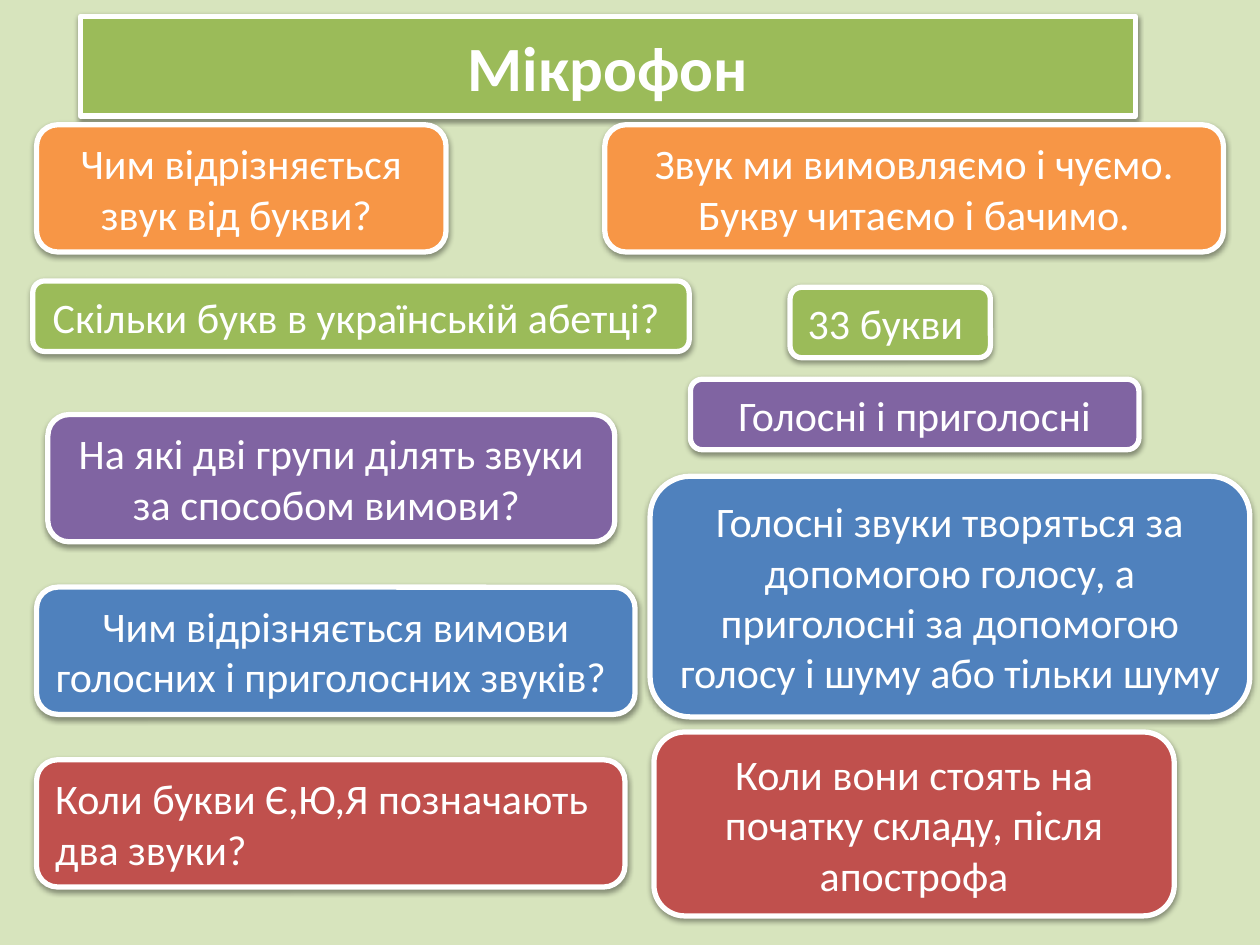
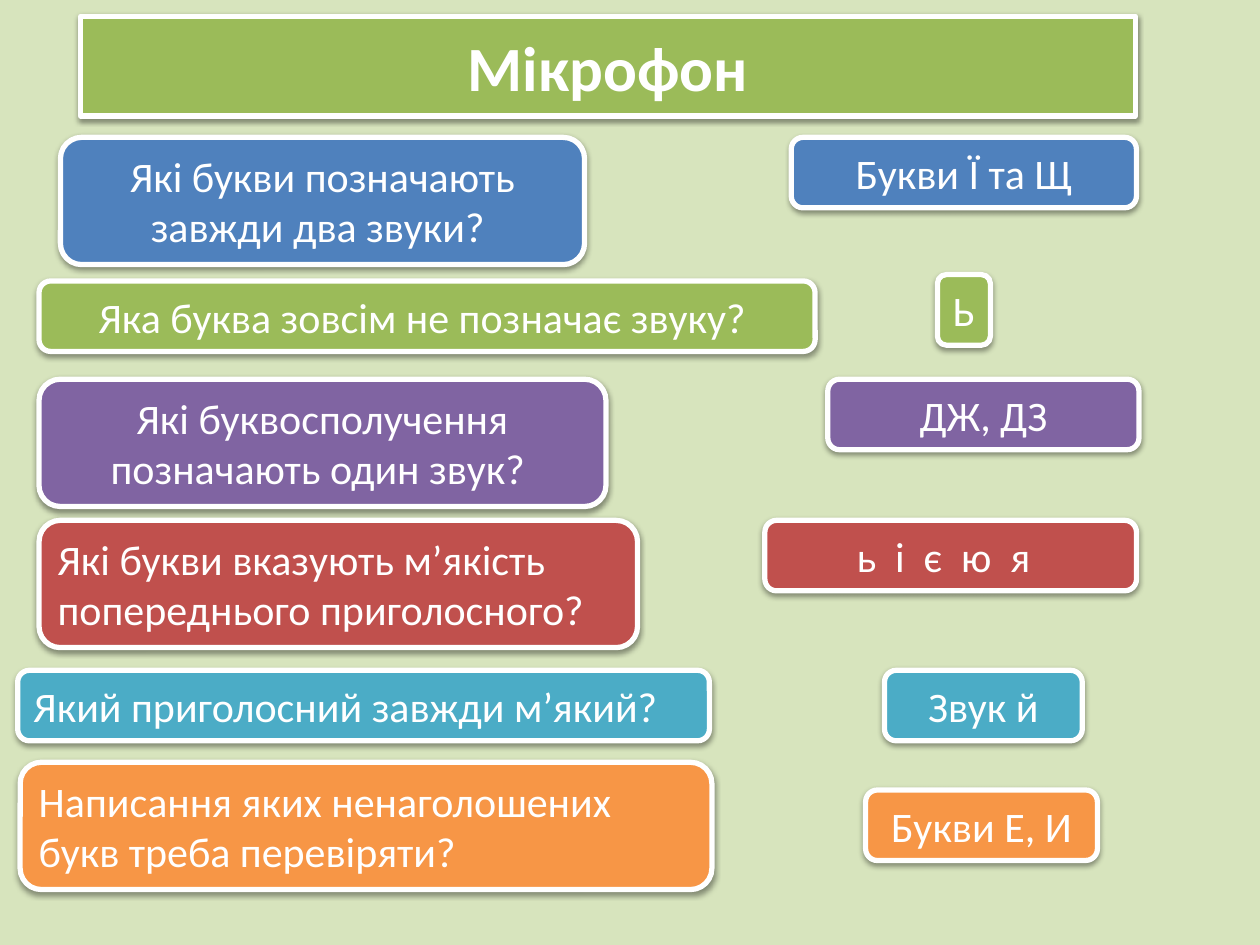
from lxml import etree
from pptx import Presentation
from pptx.dml.color import RGBColor
from pptx.enum.shapes import MSO_SHAPE
from pptx.enum.text import MSO_ANCHOR, MSO_AUTO_SIZE, PP_ALIGN
from pptx.oxml import parse_xml
from pptx.oxml.ns import nsdecls
from pptx.util import Inches, Pt

ROUNDED = MSO_SHAPE.ROUNDED_RECTANGLE
MIDDLE = MSO_ANCHOR.MIDDLE
FIT_SHAPE = MSO_AUTO_SIZE.SHAPE_TO_FIT_TEXT
NO_FIT = MSO_AUTO_SIZE.NONE
LEFT, CENTER = PP_ALIGN.LEFT, PP_ALIGN.CENTER

# Shared look
FONT = "Calibri"
PALE, WHITE = "D7E4BD", "FFFFFF"
GREEN, ORANGE, PURPLE = "9BBB59", "F79646", "8064A2"
BLUE, RED, TEAL = "4F81BD", "C0504D", "4BACC6"
TITLE_BOX = (0.64, 0.13, 8.37, 0.79)
LINE_HEIGHT, PADDING = 0.45, 0.11
SHADOW = (
    f'<a:outerShdw {nsdecls("a")} blurRad="40000" dist="20000" '
    'dir="5400000" rotWithShape="0"><a:srgbClr val="000000">'
    '<a:alpha val="38000"/></a:srgbClr></a:outerShdw>'
)

# Each row: colour, question, answer
# Each card: text, left, top, width, number of lines, then options
SOUNDS = [
    (ORANGE,
     ("Чим відрізняється звук від букви? ", 0.29, 0.99, 3.25, 2),
     ("Звук ми вимовляємо і чуємо. Букву читаємо і бачимо.",
      4.8, 0.99, 4.91, 2)),
    (GREEN,
     ("Скільки букв в українській абетці? ", 0.26, 2.23, 5.21, 1),
     ("33 букви ", 6.27, 2.28, 1.59, 1, {"wrap": False})),
    (PURPLE,
     ("На які дві групи ділять звуки за способом вимови? ",
      0.38, 3.29, 4.5, 2),
     ("Голосні і приголосні", 5.48, 3.01, 3.56, 1)),
    (BLUE,
     ("Чим відрізняється вимови голосних і приголосних звуків? ",
      0.29, 4.66, 4.75, 2),
     ("Голосні звуки творяться за допомогою голосу, а приголосні "
      "за допомогою голосу і шуму або тільки шуму",
      5.16, 3.78, 4.76, 4)),
    (RED,
     ("Коли букви Є,Ю,Я позначають два звуки?",
      0.29, 6.03, 4.67, 2, {"align": LEFT}),
     ("Коли вони стоять на початку складу, після апострофа",
      5.19, 5.81, 4.13, 3)),
]
LETTERS = [
    (BLUE,
     ("Які букви позначають завжди два звуки? ", 0.48, 1.09, 4.16, 2),
     ("Букви Ї та Щ", 6.28, 1.09, 2.74, 1)),
    (GREEN,
     ("Яка буква зовсім не позначає звуку? ", 0.31, 2.23, 6.16, 1),
     ("Ь", 7.44, 2.18, 0.42, 1, {"wrap": False})),
    (PURPLE,
     ("Які буквосполучення позначають один звук? ", 0.31, 3.01, 4.5, 2),
     ("ДЖ, ДЗ", 6.57, 3.01, 2.47, 1)),
    (RED,
     ("Які букви вказують м’якість попереднього приголосного?",
      0.31, 4.13, 4.75, 2, {"align": LEFT}),
     ("ь і є ю я ", 6.07, 4.13, 2.95, 1, {"spacing": 2.7})),
    (TEAL,
     ("Який приголосний завжди м’який?",
      0.14, 5.32, 5.49, 1, {"align": LEFT}),
     ("Звук й", 7.02, 5.32, 1.57, 1)),
    (ORANGE,
     ("Написання яких ненаголошених букв треба перевіряти?",
      0.16, 6.05, 5.49, 2, {"align": LEFT}),
     ("Букви Е, И", 6.87, 6.27, 1.84, 1)),
]


def rgb(value):
    return RGBColor.from_string(value)


def style_box(sp, color):
    """Solid fill, white outline and soft shadow."""
    sp.fill.solid()
    sp.fill.fore_color.rgb = rgb(color)
    sp.line.color.rgb = rgb(WHITE)
    sp.line.width = Pt(3)
    sp.shadow.inherit = False
    effects = sp.element.spPr.find(".//{*}effectLst")
    etree.strip_elements(effects, "{*}outerShdw")
    effects.append(parse_xml(SHADOW))


def write(sp, text, size, align=CENTER, bold=False):
    tf = sp.text_frame
    tf.vertical_anchor = MIDDLE
    p = tf.paragraphs[0]
    p.alignment = align
    r = p.add_run()
    r.text = text
    p.font.name = FONT
    p.font.size = Pt(size)
    p.font.bold = bold
    p.font.color.rgb = rgb(WHITE)
    # The run carries the colour too, so a shape style cannot override it
    r.font.color.rgb = rgb(WHITE)
    return r


def add_title(slide, text, box):
    sp = slide.shapes.title
    sp.left, sp.top, sp.width, sp.height = map(Inches, box)
    style_box(sp, GREEN)
    sp.text_frame.auto_size = NO_FIT
    write(sp, text, 36, bold=True)


def add_card(slide, color, text, left, top, width, lines, options=None):
    options = options or {}
    height = PADDING + lines * LINE_HEIGHT
    sp = slide.shapes.add_shape(
        ROUNDED, *map(Inches, (left, top, width, height)))
    style_box(sp, color)
    sp.text_frame.word_wrap = options.get("wrap", True)
    sp.text_frame.auto_size = FIT_SHAPE
    r = write(sp, text, 24, options.get("align", CENTER))
    if "spacing" in options:
        r.font._element.set("spc", str(round(options["spacing"] * 100)))


def add_quiz_slide(prs, rows):
    slide = prs.slides.add_slide(prs.slide_layouts[5])
    slide.background.fill.solid()
    slide.background.fill.fore_color.rgb = rgb(PALE)
    add_title(slide, "Мікрофон", TITLE_BOX)
    for color, question, answer in rows:
        add_card(slide, color, *question)
        add_card(slide, color, *answer)


def main():
    prs = Presentation()
    prs.slide_width, prs.slide_height = Inches(10), Inches(7.5)
    for rows in (SOUNDS, LETTERS):
        add_quiz_slide(prs, rows)
    prs.save("out.pptx")


if __name__ == "__main__":
    main()
